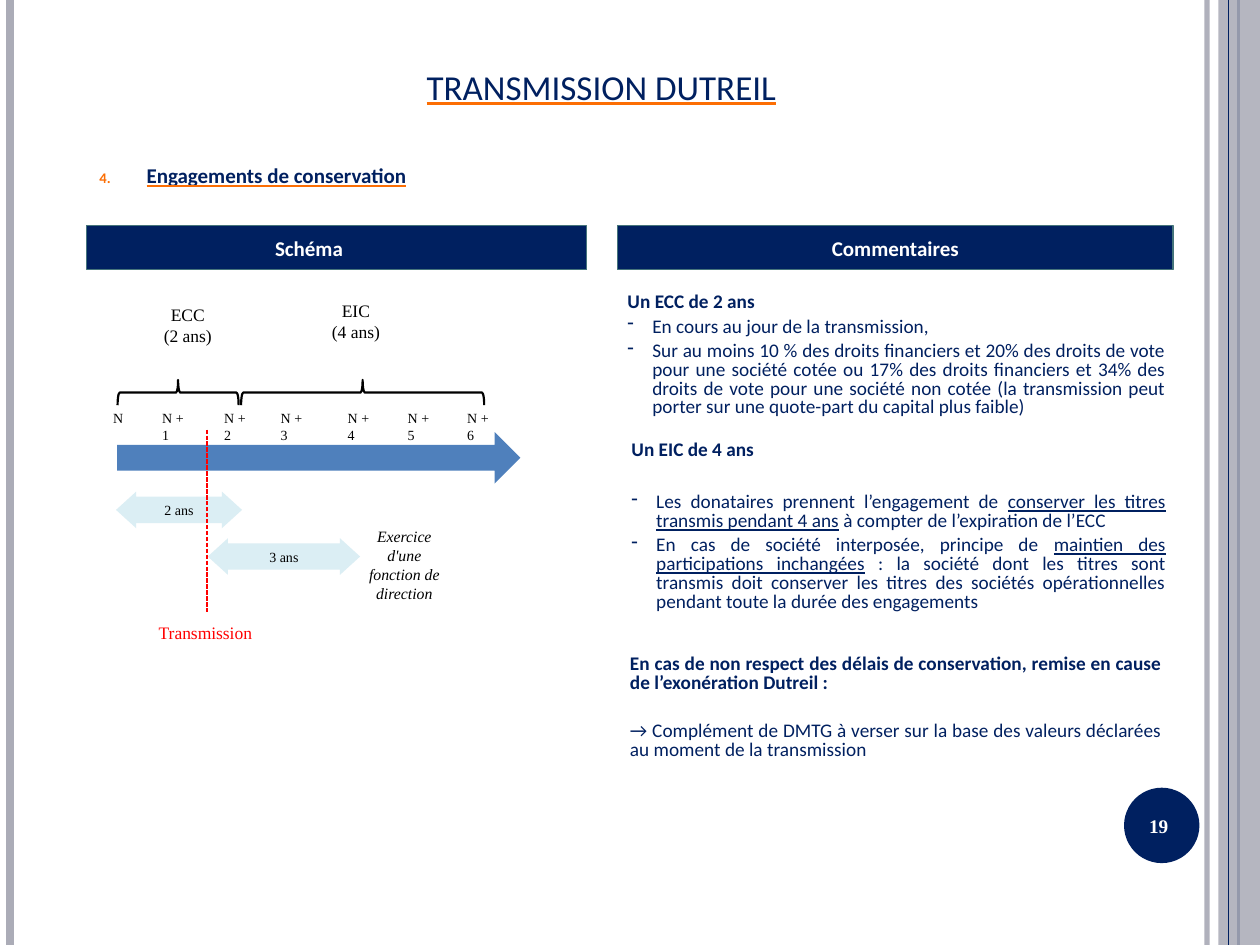
from lxml.etree import SubElement
from pptx import Presentation
from pptx.dml.color import RGBColor
from pptx.enum.dml import MSO_LINE
from pptx.enum.shapes import MSO_CONNECTOR, MSO_SHAPE as SHAPE
from pptx.enum.text import MSO_ANCHOR as ANCHOR, MSO_AUTO_SIZE, PP_ALIGN as ALIGN
from pptx.oxml.ns import qn
from pptx.util import Cm, Pt

COLORS = {
    "navy": "002060", "orange": "FC6E04", "gray": "ABACB7", "teal": "45747B",
    "blue": "4F80BC", "pale": "DBEEF4", "red": "FF0000", "black": "000000", "white": "FFFFFF",
}
SANS, SERIF = "Calibri", "Times New Roman"
YEAR_LEFTS = [0.53, 1.52, 2.77, 3.91, 5.26, 6.47, 7.67]


def rgb(name):
    """Return the named colour."""
    return RGBColor.from_string(COLORS[name])


def add_color(parent, name):
    """Append an sRGB colour element to the parent."""
    SubElement(parent, qn("a:srgbClr"), val=COLORS[name])


def set_alpha(element, percent):
    """Make the first colour of the element partly transparent."""
    color = next(element.iter(qn("a:srgbClr")))
    SubElement(color, qn("a:alpha"), val=str(percent * 1000))


def write(frame, text, *, font=SANS, size=11, color="navy", bold=False, italic=False,
          align=ALIGN.LEFT, before=0, line=None, hang=0, bullet=None, underline=None):
    """Add one paragraph; parts between bars are underlined."""
    paragraph = frame.paragraphs[0]
    if paragraph.runs:
        paragraph = frame.add_paragraph()
    paragraph.alignment = align
    paragraph.space_before = Pt(before)
    if line:
        paragraph.line_spacing = Pt(line)
    props = paragraph._p.get_or_add_pPr()
    props.set("marL", str(Cm(hang)))
    props.set("indent", str(-Cm(hang)))
    if bullet == "-":
        SubElement(props, qn("a:buChar"), char=bullet)
    elif bullet:
        add_color(SubElement(props, qn("a:buClr")), "orange")
        SubElement(props, qn("a:buSzPct"), val="70000")
        SubElement(props, qn("a:buAutoNum"), type="arabicPeriod", startAt=str(bullet))
    else:
        SubElement(props, qn("a:buNone"))
    for index, part in enumerate(text.split("|")):
        if not part:
            continue
        run = paragraph.add_run()
        run.text = part
        run.font.size, run.font.bold, run.font.italic = Pt(size), bold, italic
        run.font.underline = index % 2 == 1
        run.font.color.rgb = rgb(color)
        if underline:
            fill = SubElement(run._r.get_or_add_rPr(), qn("a:uFill"))
            add_color(SubElement(fill, qn("a:solidFill")), underline)
        run.font.name = font


def set_insets(frame, top=0, right=0):
    """Set the inner margins of a text frame."""
    frame.margin_left = frame.margin_bottom = 0
    frame.margin_top, frame.margin_right = Cm(top), Cm(right)


def add_text(slide, box, top=0.03, wrap=True):
    """Add a text box and return its frame."""
    frame = slide.shapes.add_textbox(*map(Cm, box)).text_frame
    frame.word_wrap = wrap
    set_insets(frame, top)
    return frame


def add_block(slide, kind, box, fill=None, line=None, width=0.75):
    """Add a preset shape without shadow."""
    block = slide.shapes.add_shape(kind, *map(Cm, box))
    block.shadow.inherit = False
    if fill:
        block.fill.solid()
        block.fill.fore_color.rgb = rgb(fill)
    else:
        block.fill.background()
    if line:
        block.line.color.rgb = rgb(line)
        block.line.width = Pt(width)
    else:
        block.line.fill.background()
    return block


def add_vertical(slide, x, top, bottom, color, width):
    """Add a vertical line."""
    rule = slide.shapes.add_connector(MSO_CONNECTOR.STRAIGHT, Cm(x), Cm(top), Cm(x), Cm(bottom))
    rule.line.color.rgb = rgb(color)
    rule.line.width = Pt(width)
    SubElement(rule._element.spPr, qn("a:effectLst"))
    return rule


def place(placeholder, box, anchor):
    """Move a placeholder and return its frame."""
    placeholder.left, placeholder.top, placeholder.width, placeholder.height = map(Cm, box)
    frame = placeholder.text_frame
    frame.auto_size = MSO_AUTO_SIZE.NONE
    frame.vertical_anchor = anchor
    return frame


def draw_border(slide, width, height):
    """Draw the side rules, the right band and the page number."""
    outer_rule = add_vertical(slide, width - 1.07, 0, height, "gray", 3)
    set_alpha(outer_rule._element, 93)
    add_vertical(slide, 0.2, 0, height, "gray", 4.5)
    add_vertical(slide, width - 0.43, 0, height, "navy", 1.5)
    band = add_block(slide, SHAPE.RECTANGLE, (width - 0.84, 0, 0.84, height), "gray")
    set_alpha(band._element, 87)
    add_vertical(slide, width - 0.63, 0, height, "navy", 0.75)
    page = add_block(slide, SHAPE.OVAL, (width - 2.74, 15.88, 1.52, 1.52), "navy").text_frame
    set_insets(page, right=0.12)
    write(page, "19", font=SERIF, color="white", bold=True, align=ALIGN.CENTER)


def draw_headings(slide):
    """Fill the title and the numbered heading."""
    title = place(slide.shapes.title, (1.75, 1.07, 20.75, 1.22), ANCHOR.BOTTOM)
    write(title, "|TRANSMISSION DUTREIL|", size=20, align=ALIGN.CENTER, underline="orange")
    heading = place(slide.placeholders[1], (1.75, 3.15, 20.93, 14.81), ANCHOR.TOP)
    write(heading, "|Engagements de conservation|", size=12, bold=True, before=6,
          hang=0.95, bullet=4, underline="orange")


def draw_header(slide, box, text, right=0):
    """Draw the bar that heads a column."""
    frame = add_block(slide, SHAPE.RECTANGLE, box, "navy", "teal").text_frame
    set_insets(frame, right=right)
    frame.vertical_anchor = ANCHOR.MIDDLE
    write(frame, text, size=12, color="white", bold=True, align=ALIGN.CENTER)


def draw_schema(slide, left, top, width):
    """Draw the left column: the timeline of the commitments."""
    draw_header(slide, (left, top, width, 0.89), "Schéma", right=1.12)
    add_block(slide, SHAPE.RIGHT_ARROW, (left + 0.61, top + 4.16, 8.13, 1.04), "blue")

    for x, y, span, text in [(0.59, 5.36, 2.54, "2 ans"), (2.44, 6.3, 3.07, "3 ans")]:
        period = add_block(slide, SHAPE.LEFT_RIGHT_ARROW, (left + x, top + y, span, 0.74), "pale")
        period.adjustments[0], period.adjustments[1] = 0.72, 0.55
        set_insets(period.text_frame)
        period.text_frame.word_wrap = False
        write(period.text_frame, text, font=SERIF, size=8, color="black", align=ALIGN.CENTER)

    depth = 0.51
    for x, span in [(0.62, 2.44), (3.11, 4.9)]:
        box = (left + x + (span - depth) / 2, top + 3.11 - (span - depth) / 2, depth, span)
        add_block(slide, SHAPE.LEFT_BRACE, box, line="black", width=1.25).rotation = 90

    for x, y, span, lines in [(0.97, 1.55, 2.13, ("ECC", "(2 ans)")),
                              (4.5, 1.47, 1.85, ("EIC", "(4 ans)"))]:
        label = add_text(slide, (left + x, top + y, span, 0.89))
        for text in lines:
            write(label, text, font=SERIF, size=10, color="black", align=ALIGN.CENTER)

    for year, x in enumerate(YEAR_LEFTS):
        label = add_text(slide, (left + x, top + 3.68, 0.64, 0.38))
        write(label, f"N + {year}" if year else "N", font=SERIF, size=8, color="black", before=1)

    duty = add_text(slide, (left + 5.64, top + 6.04, 1.52, 1.6))
    write(duty, "Exercice d'une fonction de direction", font=SERIF, size=9, color="black",
          italic=True, align=ALIGN.CENTER, before=1)
    transfer = add_text(slide, (left + 1.45, top + 7.95, 1.93, 0.46), wrap=False)
    write(transfer, "Transmission", font=SERIF, size=10, color="red", before=0.9)
    moment = add_vertical(slide, left + 2.42, top + 4.11, top + 7.79, "red", 0.84)
    moment.line.dash_style = MSO_LINE.SQUARE_DOT


def draw_comments(slide, left, top, width):
    """Draw the right column: the comments on each commitment."""
    draw_header(slide, (left, top, width, 0.89), "Commentaires")
    lead = dict(bold=True, align=ALIGN.JUSTIFY, before=2.8)
    item = dict(align=ALIGN.JUSTIFY, before=3, line=10.8, hang=0.5, bullet="-")

    collective = add_text(slide, (left + 0.2, top + 1.19, 10.85, 3.25), top=0.1)
    write(collective, "Un ECC de 2 ans", **lead)
    write(collective, "En cours au jour de la transmission,", **item)
    write(collective, "Sur au moins 10 % des droits financiers et 20% des droits de vote pour une "
          "société cotée ou 17% des droits financiers et 34% des droits de vote pour une société "
          "non cotée (la transmission peut porter sur une quote-part du capital plus faible)", **item)

    individual = add_text(slide, (left + 0.28, top + 4.16, 10.77, 3.71), top=0.1)
    write(individual, "Un EIC de 4 ans", **lead)
    write(individual, "Les donataires prennent l’engagement de |conserver les titres transmis "
          "pendant 4 ans| à compter de l’expiration de l’ECC", **{**item, "before": 19.3})
    write(individual, "En cas de société interposée, principe de |maintien des participations "
          "inchangées| : la société dont les titres sont transmis doit conserver les titres des "
          "sociétés opérationnelles pendant toute la durée des engagements", **item)

    breach = add_text(slide, (left + 0.25, top + 8.58, 10.72, 2.26), top=0.08)
    write(breach, "En cas de non respect des délais de conservation, remise en cause de "
          "l’exonération Dutreil :", line=10.8, **lead)
    write(breach, "→ Complément de DMTG à verser sur la base des valeurs déclarées au moment de "
          "la transmission", align=ALIGN.JUSTIFY, before=17, line=10.8)


def main():
    """Build the slide and save it."""
    deck = Presentation()
    deck.slide_width, deck.slide_height = Cm(25.4), Cm(19.05)
    slide = deck.slides.add_slide(deck.slide_layouts[1])
    draw_border(slide, 25.4, 19.05)
    draw_headings(slide)
    draw_schema(slide, 1.75, 4.55, 10.08)
    draw_comments(slide, 12.45, 4.55, 11.2)
    deck.save("out.pptx")


if __name__ == "__main__":
    main()
